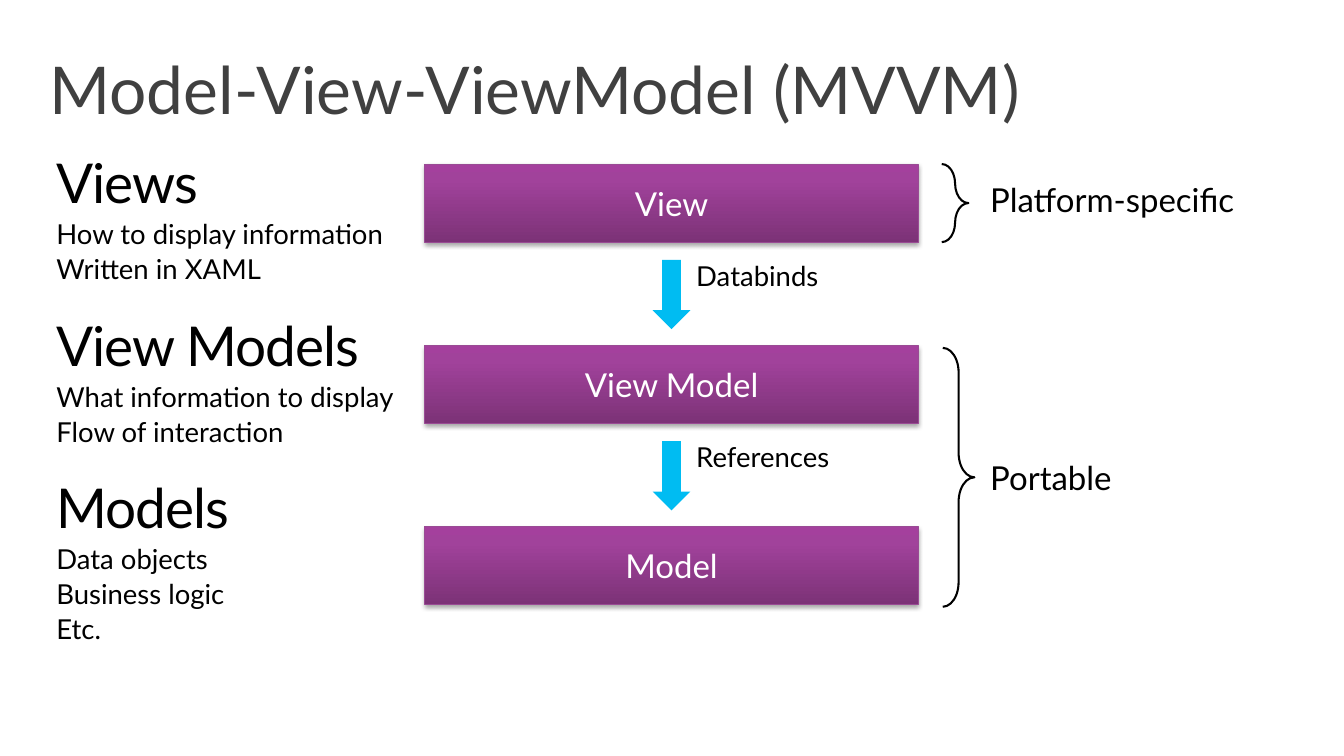
from copy import deepcopy
from dataclasses import dataclass

from lxml import etree
from pptx import Presentation
from pptx.dml.color import RGBColor
from pptx.enum.shapes import MSO_SHAPE
from pptx.enum.text import MSO_ANCHOR, MSO_AUTO_SIZE, PP_ALIGN
from pptx.oxml.ns import qn
from pptx.util import Inches, Pt

RECTANGLE, BRACE, DOWN_ARROW = MSO_SHAPE.RECTANGLE, MSO_SHAPE.RIGHT_BRACE, MSO_SHAPE.DOWN_ARROW
TOP, MIDDLE = MSO_ANCHOR.TOP, MSO_ANCHOR.MIDDLE
LEFT, CENTER = PP_ALIGN.LEFT, PP_ALIGN.CENTER
NO_FIT, FIT_SHAPE = MSO_AUTO_SIZE.NONE, MSO_AUTO_SIZE.SHAPE_TO_FIT_TEXT


@dataclass(frozen=True)
class Theme:
    """Colours, font and type sizes of the slide."""
    font: str = "Lato"
    title: str = "404040"
    ink: str = "000000"
    white: str = "FFFFFF"
    arrow: str = "00BCF2"
    outline: str = "994B94"
    gradient: tuple = ((0, "7C3277"), (0.8, "A1429B"), (1, "A4409D"))
    title_size: int = 48
    heading_size: int = 40
    label_size: int = 24
    body_size: int = 20


THEME = Theme()
NOTES = (
    ("Views", ("How to display information", "Written in XAML")),
    ("View Models", ("What information to display", "Flow of interaction")),
    ("Models", ("Data objects", "Business logic", "Etc.")),
)
LAYERS = ("View", "View Model", "Model")
RELATIONS = (("Databinds", 1.25), ("References", 1.35))
SCOPES = (
    ("Platform-specific", (0, 0, 0.27, 0.79), (0.16, 2.5)),
    ("Portable", (0.01, 1.86, 0.32, 2.62), (2.97, 1.25)),
)


def apply_format(target, values):
    """Set every attribute named in values on target."""
    for name, value in values.items():
        setattr(target, name, value)


def set_frame(frame, inset=(0, 0), **values):
    """Set the insets and other properties of a text frame."""
    horizontal, vertical = map(Inches, inset)
    margins = {"margin_left": horizontal, "margin_right": horizontal,
               "margin_top": vertical, "margin_bottom": vertical}
    apply_format(frame, margins | values)


def write(paragraph, text, size, color, **values):
    """Write one styled run into a paragraph and return the run."""
    run = paragraph.add_run()
    apply_format(run, {"text": text})
    apply_format(run.font, {"name": THEME.font, "size": Pt(size)})
    run.font.color.rgb = RGBColor.from_string(color)
    apply_format(paragraph, values)
    return run


def add_figure(slide, kind, box, line=None, width=0.75, fill=None):
    """Add a flat preset shape with an optional fill and line."""
    shape = slide.shapes.add_shape(kind, *map(Inches, box))
    shape.shadow.inherit = False
    if fill:
        shape.fill.solid()
        shape.fill.fore_color.rgb = RGBColor.from_string(fill)
    else:
        shape.fill.background()
    if line:
        shape.line.color.rgb = RGBColor.from_string(line)
        shape.line.width = Pt(width)
    else:
        shape.line.fill.background()
    return shape


def add_label(slide, text, box, size):
    """Add a one-line text label that does not wrap."""
    frame = slide.shapes.add_textbox(*map(Inches, box)).text_frame
    set_frame(frame, word_wrap=False, auto_size=FIT_SHAPE)
    write(frame.paragraphs[0], text, size, THEME.ink)


def add_gradient(shape):
    """Fill a shape with the theme gradient, darkest at the bottom."""
    shape.fill.gradient()
    shape.fill.gradient_angle = 90
    stop_list = shape._element.spPr.find(".//" + qn("a:gsLst"))
    stop_list.append(deepcopy(stop_list[-1]))
    for stop, (position, color) in zip(shape.fill.gradient_stops, THEME.gradient):
        stop.color.rgb = RGBColor.from_string(color)
        stop.position = position


def add_shadow(shape):
    """Give a shape a soft shadow that falls straight down."""
    effects = shape._element.spPr.find(qn("a:effectLst"))
    shadow = etree.SubElement(effects, qn("a:outerShdw"), blurRad=str(Pt(3.1)),
                              dist=str(Pt(1.8)), dir="5400000", rotWithShape="0")
    color = etree.SubElement(shadow, qn("a:srgbClr"), val=THEME.ink)
    etree.SubElement(color, qn("a:alpha"), val="35000")


def place_title(slide, box, text):
    """Place and format the title placeholder in the box."""
    title = slide.shapes.title
    apply_format(title, dict(zip(("left", "top", "width", "height"), map(Inches, box))))
    set_frame(title.text_frame, (0.2, 0.16), vertical_anchor=TOP, word_wrap=True, auto_size=NO_FIT)
    write(title.text_frame.paragraphs[0], text, THEME.title_size, THEME.title, alignment=LEFT)


def place_notes(slide, box):
    """Place the headings and their details as one text block in the box."""
    frame = slide.shapes.add_textbox(*map(Inches, box)).text_frame
    set_frame(frame, word_wrap=True, auto_size=FIT_SHAPE)
    paragraph = frame.paragraphs[0]
    for heading, details in NOTES:
        if paragraph.runs:
            paragraph = frame.add_paragraph()
        run = write(paragraph, heading, THEME.heading_size, THEME.ink,
                    line_spacing=0.9, space_before=Pt(24))
        run.font._element.set("spc", "-70")
        for detail in details:
            paragraph = frame.add_paragraph()
            write(paragraph, detail, THEME.body_size, THEME.ink,
                  line_spacing=0.9, space_before=Pt(4))


def place_layers(slide, box):
    """Stack the layers evenly in the box, with a labelled arrow in each gap."""
    left, top, width, height = box
    layer_height = 0.79
    pitch = (height - layer_height) / (len(LAYERS) - 1)
    for index, name in enumerate(LAYERS):
        layer_box = (left, top + index * pitch, width, layer_height)
        shape = add_figure(slide, RECTANGLE, layer_box, THEME.outline)
        add_gradient(shape)
        add_shadow(shape)
        set_frame(shape.text_frame, (0.1, 0.05), vertical_anchor=MIDDLE, word_wrap=True)
        write(shape.text_frame.paragraphs[0], name, THEME.label_size, THEME.white, alignment=CENTER)
    center = left + width / 2
    for index, (name, label_width) in enumerate(RELATIONS):
        arrow_top = top + index * pitch + 0.97
        add_figure(slide, DOWN_ARROW, (center - 0.19, arrow_top, 0.38, 0.7), fill=THEME.arrow)
        add_label(slide, name, (center + 0.25, arrow_top - 0.01, label_width, 0.34), THEME.body_size)


def place_scopes(slide, box):
    """Place the braces at the left of the box and their labels beside them."""
    left, top, _, _ = box
    for name, (offset, drop, width, height), (label_drop, label_width) in SCOPES:
        brace = add_figure(slide, BRACE, (left + offset, top + drop, width, height), THEME.ink, 1.5)
        brace.adjustments[0] = 0.78
        add_label(slide, name, (left + 0.49, top + label_drop, label_width, 0.4), THEME.label_size)


def build_slide(presentation):
    """Build the slide from its four regions."""
    slide = presentation.slides.add_slide(presentation.slide_layouts[5])
    place_title(slide, (0.3, 0.33, 13, 1), "Model-View-ViewModel (MVVM)")
    place_notes(slide, (0.57, 1.58, 3.91, 5.08))
    place_layers(slide, (4.3, 1.66, 4.99, 4.46))
    place_scopes(slide, (9.53, 1.66, 2.99, 4.48))


def main():
    """Create the presentation and save it."""
    presentation = Presentation()
    apply_format(presentation, {"slide_width": Inches(13.6), "slide_height": Inches(7.65)})
    build_slide(presentation)
    presentation.save("out.pptx")


if __name__ == "__main__":
    main()
